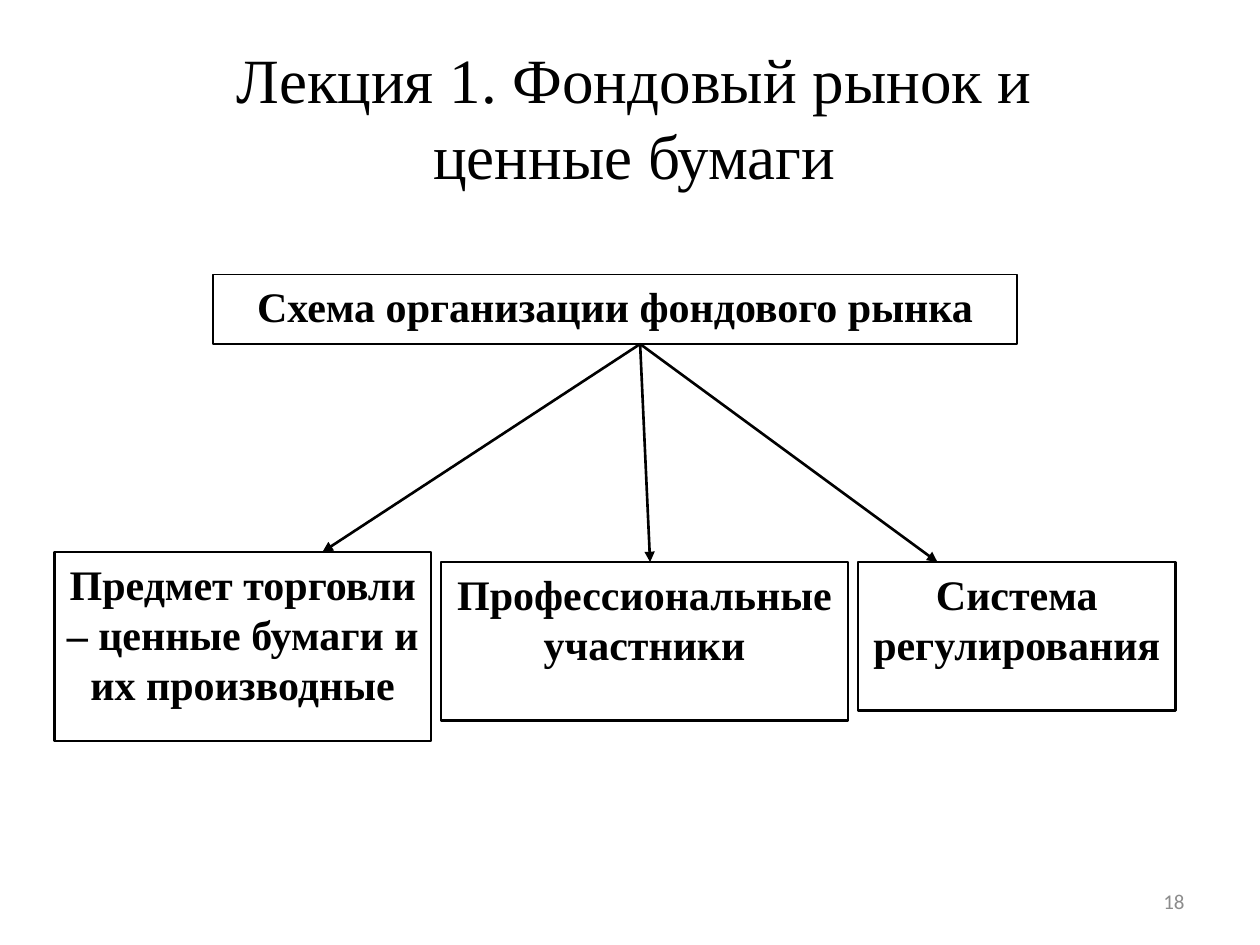
from dataclasses import dataclass

from lxml import etree
from pptx import Presentation
from pptx.dml.color import RGBColor
from pptx.enum import shapes, text
from pptx.oxml import ns
from pptx.util import Pt


@dataclass(frozen=True)
class Theme:
    ink: RGBColor = RGBColor(0, 0, 0)
    paper: RGBColor = RGBColor(255, 255, 255)
    muted: RGBColor = RGBColor(0x8C, 0x8C, 0x8C)
    serif: str = "Times New Roman"
    sans: str = "Calibri"
    title: int = 36
    body: int = 24
    small: int = 12
    thin: float = 0.75
    thick: float = 1.5


THEME = Theme()
CENTER = text.PP_ALIGN.CENTER


def write(sp, content, size, font=THEME.serif, color=THEME.ink, bold=False,
          align=CENTER, anchor=text.MSO_ANCHOR.TOP):
    tf = sp.text_frame
    tf.word_wrap = True
    tf.vertical_anchor = anchor
    p = tf.paragraphs[0]
    p.text = content
    p.alignment = align
    p.font.name = font
    p.font.size = Pt(size)
    p.font.bold = bold
    p.font.color.rgb = color


def add_label(slide, box, content, size, **style):
    sp = slide.shapes.add_textbox(*map(Pt, box))
    write(sp, content, size, anchor=text.MSO_ANCHOR.MIDDLE, **style)


def add_node(slide, box, content, line_width):
    sp = slide.shapes.add_shape(shapes.MSO_SHAPE.RECTANGLE, *map(Pt, box))
    sp.shadow.inherit = False
    sp.fill.solid()
    sp.fill.fore_color.rgb = THEME.paper
    sp.line.color.rgb = THEME.ink
    sp.line.width = Pt(line_width)
    write(sp, content, THEME.body, bold=True)


def add_arrow(slide, start, end):
    cxn = slide.shapes.add_connector(
        shapes.MSO_CONNECTOR.STRAIGHT, *map(Pt, (*start, *end)))
    cxn.line.color.rgb = THEME.ink
    cxn.line.width = Pt(THEME.thick)
    etree.SubElement(cxn.line._get_or_add_ln(), ns.qn("a:tailEnd"), type="triangle")
    etree.SubElement(cxn._element.spPr, ns.qn("a:effectLst"))


def add_market_scheme(slide, left, top):
    root_height = 39.6
    add_node(slide, (left + 90.7, top, 459.4, root_height),
             "Схема организации фондового рынка", THEME.thin)
    branches = [
        ("Предмет торговли – ценные бумаги и их производные", 158.4, 215.3, 108, 153.3),
        ("Профессиональные участники", 164.2, 232.6, 90.7, 119.5),
        ("Система регулирования", 164.2, 181.4, 85, 45.4),
    ]
    gap = 5.7
    start = (left + 334.8, top + root_height)
    x = left
    for content, drop, width, height, arrow_offset in branches:
        y = top + drop
        add_node(slide, (x, y, width, height), content, THEME.thick)
        add_arrow(slide, start, (x + arrow_offset, y))
        x += width + gap


def main():
    prs = Presentation()
    prs.slide_width, prs.slide_height = Pt(720), Pt(540)
    slide = prs.slides.add_slide(prs.slide_layouts[6])
    add_label(slide, (76.3, 21.6, 572.4, 90),
              "Лекция 1. Фондовый рынок и ценные бумаги", THEME.title)
    add_market_scheme(slide, 31, 157)
    add_label(slide, (516, 500.5, 168, 28.8), "18", THEME.small,
              font=THEME.sans, color=THEME.muted, align=text.PP_ALIGN.RIGHT)
    prs.save("out.pptx")


if __name__ == "__main__":
    main()
